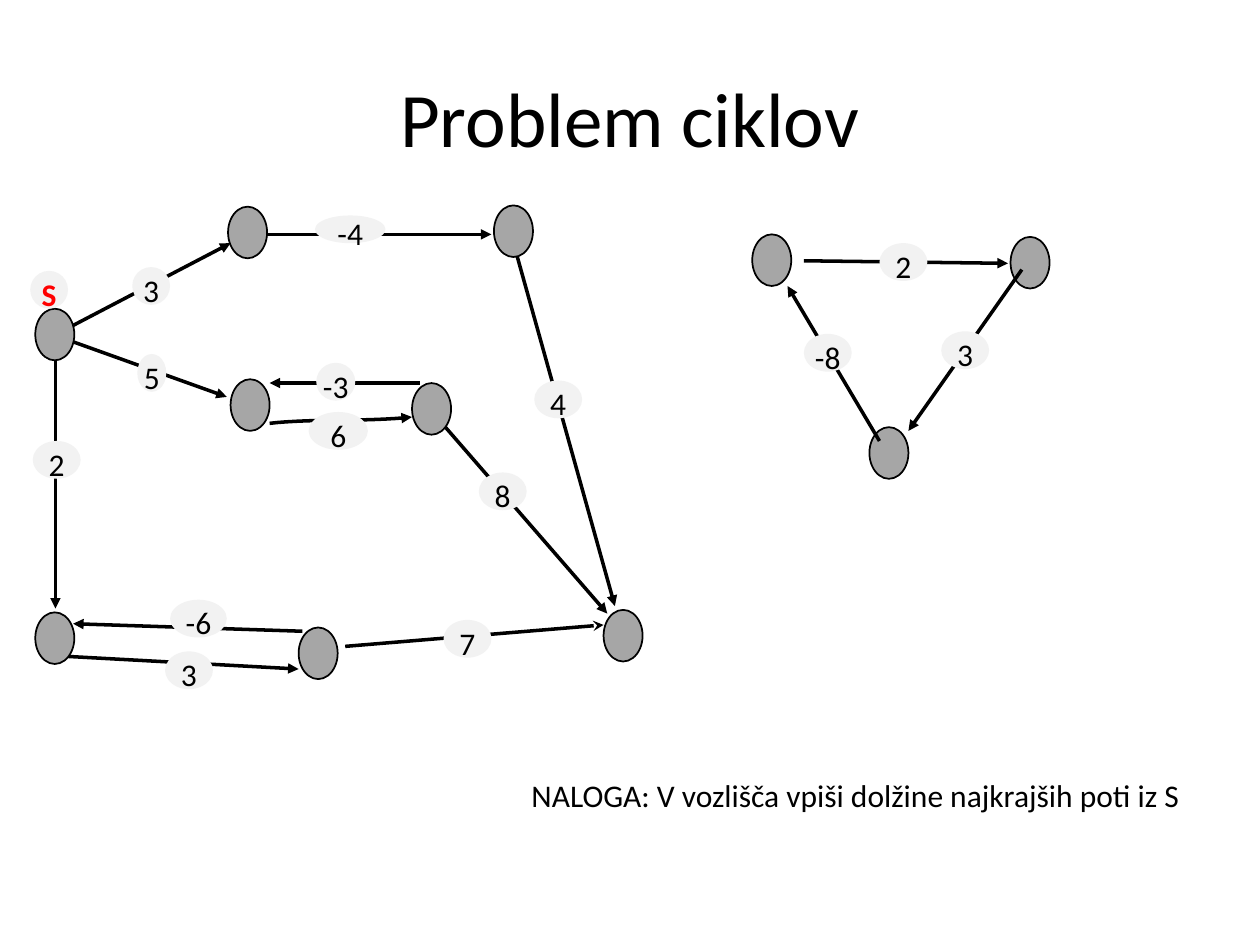
from lxml.etree import SubElement
from pptx import Presentation
from pptx.dml.color import RGBColor
from pptx.enum.shapes import MSO_CONNECTOR, MSO_SHAPE
from pptx.enum.text import MSO_ANCHOR, PP_ALIGN
from pptx.oxml.ns import qn
from pptx.util import Inches, Pt

FONT = "Calibri"
COLORS = {"ink": "000000", "node": "A6A6A6", "weight": "F2F2F2", "source": "FF0000"}
NODE_W, NODE_H = 0.31, 0.41

TITLE = "Problem ciklov"
TASK = "NALOGA: V vozlišča vpiši dolžine najkrajših poti iz S"

# Start x, y, tip x, y, arrowhead
MAIN_EDGES = [
    (2.74, 5.13, 4.79, 4.96, "stealth"),
    (3.33, 3.04, 2.14, 3.04, "triangle"),
    (4.07, 1.91, 4.88, 4.81, "triangle"),
    (2.4, 5.01, 0.58, 4.95, "triangle"),
    (3.5, 3.35, 4.82, 4.87, "triangle"),
    (0.44, 2.78, 0.44, 4.83, "triangle"),
    (0.46, 2.67, 1.8, 3.15, "triangle"),
    (0.49, 2.63, 1.83, 1.93, "triangle"),
    (1.97, 1.86, 3.9, 1.86, "triangle"),
    (0.54, 5.21, 2.37, 5.31, "triangle"),
]
CYCLE_EDGES = [
    (6.98, 3.5, 6.25, 2.27, "triangle"),
    (8.11, 2.14, 7.21, 3.42, "triangle"),
    (6.38, 2.07, 8, 2.09, "triangle"),
]
# Bezier control points, start to tip
CURVED_EDGE = [(2.14, 3.36), (2.5, 3.32), (2.91, 3.35), (3.27, 3.31)]

# Left, top
MAIN_NODES = [(0.28, 2.45), (0.28, 4.86), (1.83, 3.01), (1.81, 1.64),
              (3.92, 1.63), (2.37, 4.98), (3.27, 3.04), (4.79, 4.84)]
CYCLE_NODES = [(8.02, 1.88), (5.97, 1.86), (6.9, 3.39)]

# Text, left, top, width, height
MAIN_WEIGHTS = [
    ("6", 2.45, 3.27, 0.47, 0.3),
    ("2", 0.26, 3.5, 0.38, 0.3),
    ("5", 1.09, 2.81, 0.23, 0.3),
    ("-6", 1.35, 4.76, 0.45, 0.3),
    ("-3", 2.51, 2.88, 0.31, 0.3),
    ("3", 1.05, 2.12, 0.3, 0.3),
    ("-4", 2.5, 1.71, 0.56, 0.22),
    ("3", 1.31, 5.17, 0.38, 0.3),
    ("7", 3.52, 4.92, 0.38, 0.3),
    ("8", 3.8, 3.75, 0.38, 0.3),
    ("4", 4.24, 3.02, 0.38, 0.3),
]
CYCLE_WEIGHTS = [
    ("2", 6.98, 1.93, 0.38, 0.3),
    ("3", 7.47, 2.63, 0.38, 0.3),
    ("-8", 6.38, 2.65, 0.38, 0.3),
]
SOURCE_LABEL = ("S", 0.24, 2.15, 0.3, 0.3)


def rgb(name):
    return RGBColor.from_string(COLORS[name])


def add_run(p, text, size, color="ink", bold=False):
    r = p.add_run()
    r.text = text
    r.font.name, r.font.size, r.font.bold = FONT, Pt(size), bold
    r.font.color.rgb = rgb(color)


def style_arrow(sp, head):
    sp.line.color.rgb = rgb("ink")
    sp.line.width = Pt(2)
    SubElement(sp.line._get_or_add_ln(), qn("a:tailEnd"), type=head)


def add_edge(s, x1, y1, x2, y2, head):
    sp = s.shapes.add_connector(MSO_CONNECTOR.STRAIGHT, *map(Inches, (x1, y1, x2, y2)))
    style_arrow(sp, head)
    SubElement(sp._element.spPr, qn("a:effectLst"))


def add_curved_edge(s, controls, steps=16):
    """Draw a cubic Bezier arrow as short segments."""
    points = []
    for i in range(steps + 1):
        t = i / steps
        weights = ((1 - t) ** 3, 3 * t * (1 - t) ** 2, 3 * t * t * (1 - t), t ** 3)
        points.append(tuple(Inches(sum(w * c[axis] for w, c in zip(weights, controls)))
                            for axis in (0, 1)))
    fb = s.shapes.build_freeform(*points[0])
    fb.add_line_segments(points[1:], close=False)
    sp = fb.convert_to_shape()
    sp.shadow.inherit = False
    sp.fill.background()
    style_arrow(sp, "triangle")


def add_ellipse(s, x, y, w, h, fill):
    sp = s.shapes.add_shape(MSO_SHAPE.OVAL, *map(Inches, (x, y, w, h)))
    sp.shadow.inherit = False
    sp.fill.solid()
    sp.fill.fore_color.rgb = rgb(fill)
    return sp


def add_node(s, x, y):
    sp = add_ellipse(s, x, y, NODE_W, NODE_H, "node")
    sp.line.color.rgb = rgb("ink")
    sp.line.width = Pt(1)


def add_label(s, text, x, y, w, h, color="ink", bold=False):
    sp = add_ellipse(s, x, y, w, h, "weight")
    sp.line.fill.background()
    tf = sp.text_frame
    tf.word_wrap = False
    tf.vertical_anchor = MSO_ANCHOR.MIDDLE
    tf.margin_left = tf.margin_top = tf.margin_right = tf.margin_bottom = 0
    p = tf.paragraphs[0]
    p.alignment = PP_ALIGN.CENTER
    p.line_spacing = 1.2
    add_run(p, text, 18, color, bold)


def add_text(s, text, x, y, w, h, size, align, anchor):
    tf = s.shapes.add_textbox(*map(Inches, (x, y, w, h))).text_frame
    tf.word_wrap = True
    tf.vertical_anchor = anchor
    p = tf.paragraphs[0]
    p.alignment = align
    add_run(p, text, size)


def add_graph(s, edges, nodes, weights):
    for edge in edges:
        add_edge(s, *edge)
    for node in nodes:
        add_node(s, *node)
    for weight in weights:
        add_label(s, *weight)


def add_cycle(s):
    """Draw the triangle, whose edges lie over its nodes."""
    add_graph(s, [], CYCLE_NODES, [])
    add_graph(s, CYCLE_EDGES, [], CYCLE_WEIGHTS)


def main():
    prs = Presentation()
    prs.slide_width, prs.slide_height = Inches(10), Inches(7.5)
    s = prs.slides.add_slide(prs.slide_layouts[6])
    add_text(s, TITLE, 0.5, 0.3, 9, 1.25, 44, PP_ALIGN.CENTER, MSO_ANCHOR.MIDDLE)
    add_curved_edge(s, CURVED_EDGE)
    add_graph(s, MAIN_EDGES, MAIN_NODES, MAIN_WEIGHTS)
    add_cycle(s)
    add_label(s, *SOURCE_LABEL, color="source", bold=True)
    add_text(s, TASK, 4.12, 6.11, 5.76, 0.4, 18, PP_ALIGN.LEFT, MSO_ANCHOR.TOP)
    prs.save("out.pptx")


if __name__ == "__main__":
    main()
